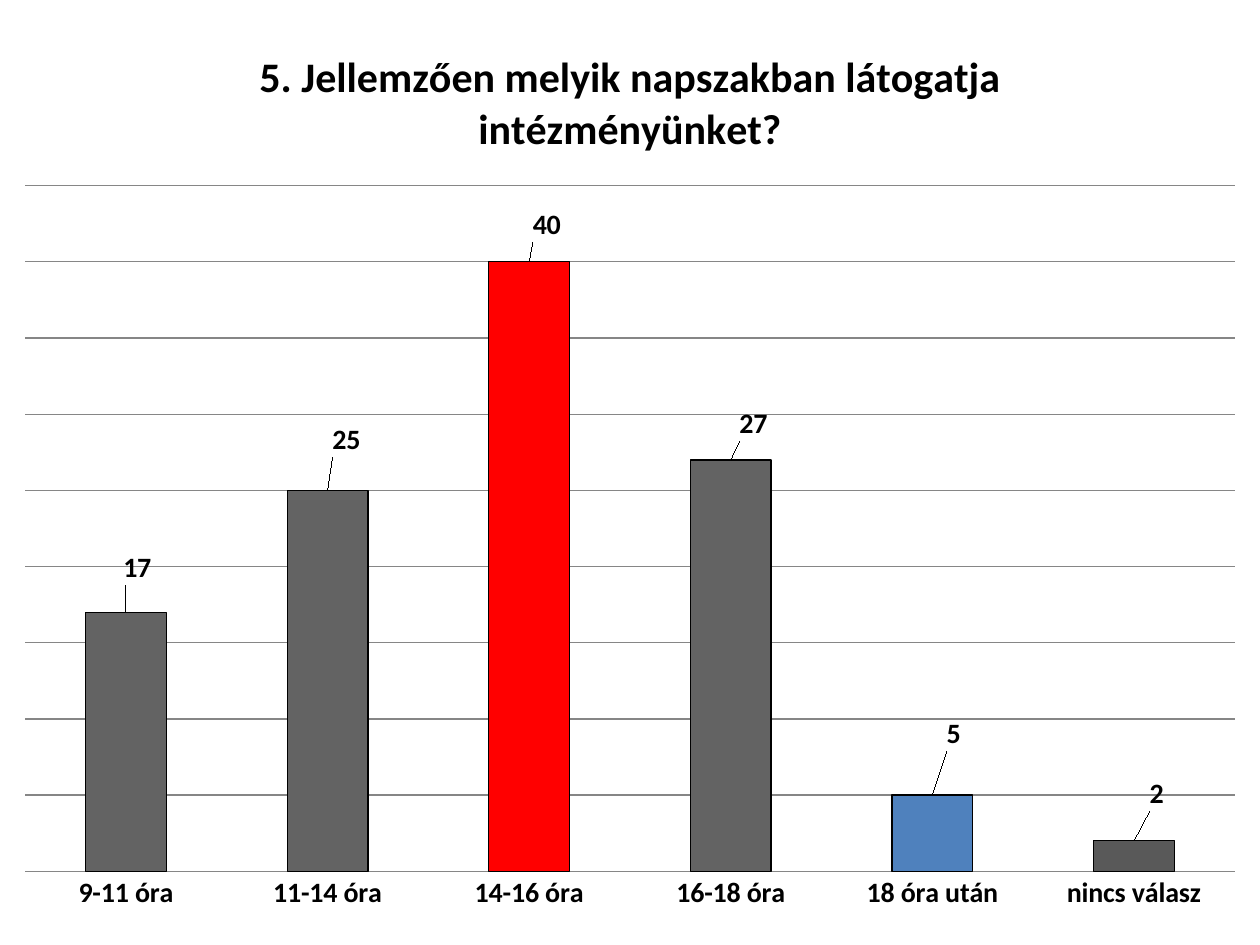
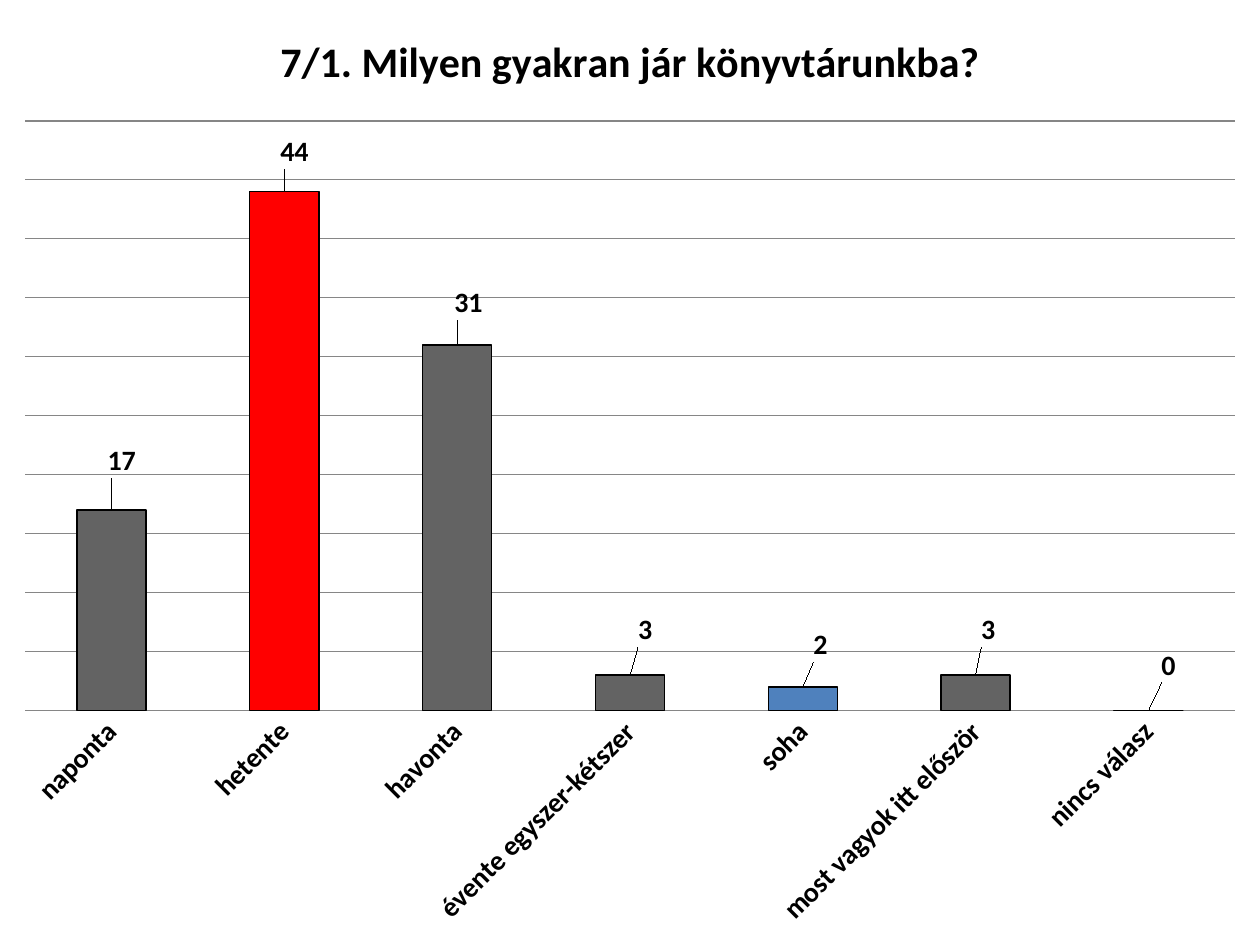
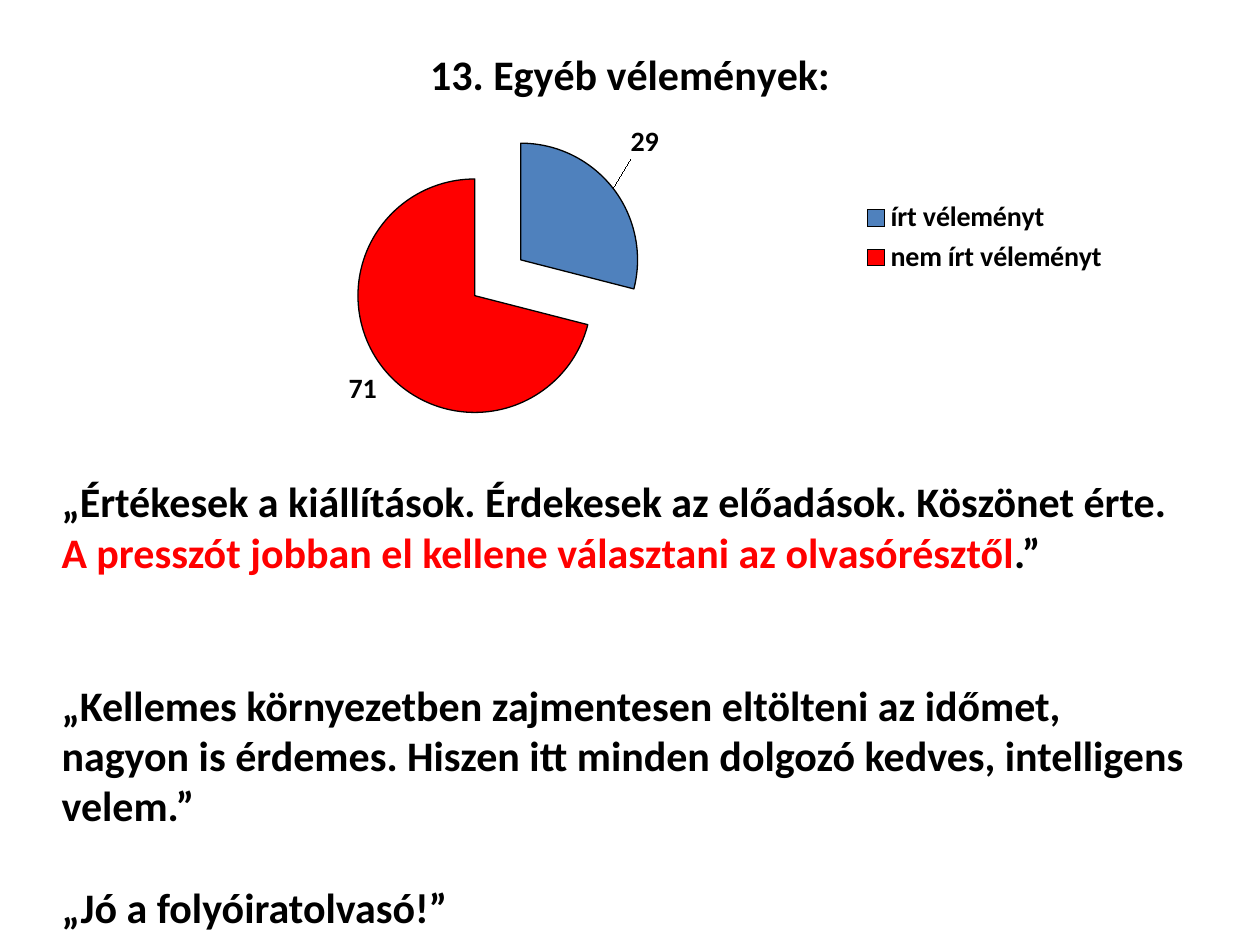
from lxml import etree
from pptx import Presentation, util as u
from pptx.chart import data as cd
from pptx.dml import color as dc
from pptx.enum import chart as ec, text as et
from pptx.oxml import ns

WIDE, HIGH = u.Inches(10), u.Inches(7.5)
FONT = "Calibri"
HUES = {"ink": "000000", "blue": "4F81BD", "red": "FF0000",
        "grey": "636363", "dark": "595959", "rule": "868686"}


def tint(name):
    return dc.RGBColor.from_string(HUES[name])


def style(font, size=16, bold=True, hue="ink"):
    font.name, font.size, font.bold = FONT, u.Pt(size), bold
    font.color.rgb = tint(hue)


def write(para, words, gap=0, **form):
    para.space_before = u.Pt(gap)
    run = para.add_run()
    run.text = words
    style(run.font, **form)


def scale(box):
    left, top, wide, high = box
    return (round(left * WIDE), round(top * HIGH),
            round(wide * WIDE), round(high * HIGH))


def lay(node, spot, **shares):
    for old in node.findall(ns.qn("c:layout")):
        node.remove(old)
    top = etree.Element(ns.qn("c:layout"))
    hand = etree.SubElement(top, ns.qn("c:manualLayout"))
    for key, val in shares.items():
        etree.SubElement(hand, ns.qn("c:" + key)).set("val", str(val))
    node.insert(spot, top)


def frame(chart, area):
    x, y, w, h = area
    lay(chart.element.find(".//" + ns.qn("c:plotArea")), 0,
        layoutTarget="inner", xMode="edge", yMode="edge", x=x, y=y, w=w, h=h)


def graph(slide, kind, box, title, cats, vals, area):
    data = cd.CategoryChartData()
    data.categories = cats
    data.add_series("Series 1", vals)
    chart = slide.shapes.add_chart(kind, *scale(box), data).chart
    style(chart.font, size=10, bold=False)
    chart.has_title = True
    write(chart.chart_title.text_frame.paragraphs[0], title, size=24)
    chart.chart_title.include_in_layout = False
    chart.has_legend = False
    frame(chart, area)
    plot = chart.plots[0]
    plot.vary_by_categories = False
    plot.has_data_labels = True
    tags = plot.data_labels
    tags.show_value = True
    tags.position = ec.XL_LABEL_POSITION.OUTSIDE_END
    style(tags.font)
    return chart


def paint(row, hues, shifts):
    for i, hue in enumerate(hues):
        part = row.points[i].format
        part.fill.solid()
        part.fill.fore_color.rgb = tint(hue)
        part.line.color.rgb = tint("ink")
        part.line.width = u.Pt(0.75)
    for i, (x, y) in enumerate(shifts):
        tag = row.points[i].data_label
        style(tag.font)
        tag.position = ec.XL_LABEL_POSITION.OUTSIDE_END
    tags = row.data_labels
    tags.show_value = True
    tags.position = ec.XL_LABEL_POSITION.OUTSIDE_END
    style(tags.font)
    for node, (x, y) in zip(row._element.iter(ns.qn("c:dLbl")), shifts):
        lay(node, 1, x=x, y=y)


def bars(slide, box, title, cats, vals, hues, shifts, area, peak, turn=0):
    chart = graph(slide, ec.XL_CHART_TYPE.COLUMN_CLUSTERED, box,
                  title, cats, vals, area)
    chart.plots[0].gap_width = 150
    row = chart.plots[0].series[0]
    row.invert_if_negative = False
    paint(row, hues, shifts)
    base, side = chart.category_axis, chart.value_axis
    base.major_tick_mark = ec.XL_TICK_MARK.NONE
    style(base.tick_labels.font)
    base.format.line.color.rgb = tint("rule")
    body = base._element.find(".//" + ns.qn("a:bodyPr"))
    body.set("rot", str(turn * 60000))
    side.minimum_scale, side.maximum_scale, side.major_unit = 0, peak, 5
    side.has_major_gridlines = True
    side.major_gridlines.format.line.color.rgb = tint("rule")
    side.visible = False


def pie(slide, box, title, cats, vals, hues, shifts, area):
    chart = graph(slide, ec.XL_CHART_TYPE.PIE, box, title, cats, vals, area)
    chart.plots[0].vary_by_categories = True
    row = chart.plots[0].series[0]
    paint(row, hues, shifts)
    burst = etree.Element(ns.qn("c:explosion"))
    burst.set("val", "25")
    row._element.find(ns.qn("c:dPt")).addprevious(burst)
    for dot in row._element.findall(ns.qn("c:dPt")):
        piece = etree.Element(ns.qn("c:explosion"))
        piece.set("val", "25")
        dot.find(ns.qn("c:spPr")).addprevious(piece)
    chart.has_legend = True
    chart.legend.position = ec.XL_LEGEND_POSITION.RIGHT
    chart.legend.include_in_layout = False
    style(chart.legend.font)


def quotes(slide, box, items):
    body = slide.shapes.add_textbox(*scale(box)).text_frame
    body.word_wrap = True
    body.auto_size = et.MSO_AUTO_SIZE.SHAPE_TO_FIT_TEXT
    for i, (gap, runs) in enumerate(items):
        para = body.add_paragraph() if i else body.paragraphs[0]
        for words, hue in runs:
            write(para, words, gap=gap, size=24, hue=hue)


def main():
    deck = Presentation()
    deck.slide_width, deck.slide_height = WIDE, HIGH
    one, two, three = [deck.slides.add_slide(deck.slide_layouts[6])
                       for _ in range(3)]
    bars(one, (0, 0.017, 1, 0.965),
         "5. Jellemzően melyik napszakban látogatja intézményünket?",
         ["9-11 óra", "11-14 óra", "14-16 óra", "16-18 óra",
          "18 óra után", "nincs válasz"],
         [17, 25, 40, 27, 5, 2],
         ["grey", "grey", "red", "grey", "blue", "dark"],
         [(0.009, -0.024), (0.015, -0.031), (0.014, -0.016),
          (0.018, -0.015), (0.017, -0.042), (0.018, -0.027)],
         (0.02, 0.186, 0.96, 0.752), 45)
    bars(two, (0, 0, 1, 1), "7/1. Milyen gyakran jár könyvtárunkba?",
         ["naponta", "hetente", "havonta", "évente egyszer-kétszer",
          "soha", "most vagyok itt először", "nincs válasz"],
         [17, 44, 31, 3, 2, 3, 0],
         ["grey", "red", "grey", "grey", "blue", "grey", "grey"],
         [(0.008, -0.028), (0.008, -0.018), (0.009, -0.021),
          (0.012, -0.024), (0.014, -0.021), (0.01, -0.024),
          (0.016, -0.024)],
         (0.02, 0.128, 0.96, 0.624), 50, turn=-45)
    pie(three, (0.11, 0.025, 0.78, 0.453), "13. Egyéb vélemények:",
        ["írt véleményt", "nem írt véleményt"], [29, 71],
        ["blue", "red"], [(0.012, -0.058)], (0.217, 0.252, 0.297, 0.684))
    quotes(three, (0.039, 0.497, 0.921, 0.592), [
        (0, [("„Értékesek a kiállítások. Érdekesek az előadások. "
              "Köszönet érte. ", "ink"),
             ("A presszót jobban el kellene választani az olvasórésztől",
              "red"),
             (".”", "ink")]),
        (58.6, [("„Kellemes környezetben zajmentesen eltölteni az időmet, "
                 "nagyon is érdemes. Hiszen itt minden dolgozó kedves, "
                 "intelligens velem.”", "ink")]),
        (29.3, [("„Jó a folyóiratolvasó!”", "ink")])])
    deck.save("out.pptx")


if __name__ == "__main__":
    main()
